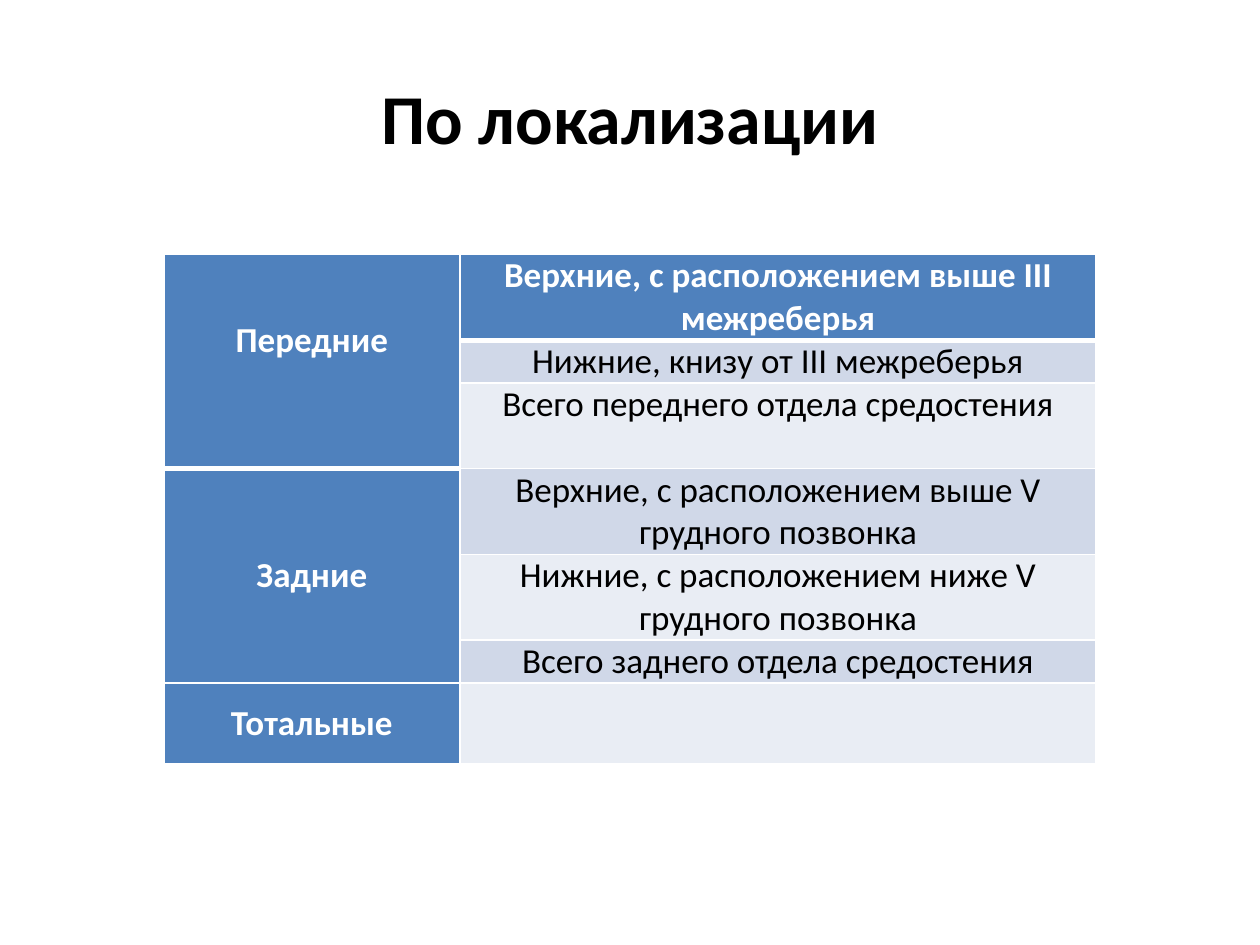
from lxml import etree
from pptx import Presentation
from pptx.dml.color import RGBColor
from pptx.enum.text import MSO_ANCHOR, PP_ALIGN
from pptx.oxml.ns import qn
from pptx.util import Inches, Pt

CENTER = PP_ALIGN.CENTER
TOP, MIDDLE = MSO_ANCHOR.TOP, MSO_ANCHOR.MIDDLE
COLORS = {"head": "4F81BD", "dark": "D0D8E8", "light": "E9EDF4",
          "white": "FFFFFF", "black": "000000"}


def set_text(tf, text, size, color, bold):
    tf.word_wrap = True
    p = tf.paragraphs[0]
    p.text = text
    p.alignment = CENTER
    p.font.name = "Calibri"
    p.font.size = Pt(size)
    p.font.bold = bold
    p.font.color.rgb = RGBColor.from_string(COLORS[color])


def add_borders(cell, widths):
    """Draw white cell borders; widths maps L, R, T and B to points."""
    tcPr = cell._tc.get_or_add_tcPr()
    for side, width in widths.items():
        ln = etree.SubElement(tcPr, qn(f"a:ln{side}"), w=str(Pt(width)))
        fill = etree.SubElement(ln, qn("a:solidFill"))
        etree.SubElement(fill, qn("a:srgbClr"), val=COLORS["white"])


prs = Presentation()
prs.slide_width, prs.slide_height = Inches(10), Inches(7.5)
s = prs.slides.add_slide(prs.slide_layouts[6])

title = s.shapes.add_textbox(Inches(0.5), Inches(0.3), Inches(9), Inches(1.25))
title.text_frame.vertical_anchor = MIDDLE
set_text(title.text_frame, "По локализации", 40, "black", True)

groups = {0: "Передние", 3: "Задние", 6: "Тотальные"}
details = [
    "Верхние, с расположением выше III межреберья",
    "Нижние, книзу от III межреберья",
    "Всего переднего отдела средостения",
    "Верхние, с расположением выше V грудного позвонка",
    "Нижние, с расположением ниже V грудного позвонка",
    "Всего заднего отдела средостения",
    "",
]
col_widths = [2.35, 5.05]
row_heights = [0.68, 0.34, 0.68, 0.68, 0.68, 0.34, 0.64]
thick_bottom = {(0, 0), (2, 0), (0, 1)}
thick_top = {(3, 0), (1, 1)}

table = s.shapes.add_table(len(row_heights), len(col_widths), Inches(1.3), Inches(2.02),
                           Inches(sum(col_widths)), Inches(sum(row_heights))).table
for column, width in zip(table.columns, col_widths):
    column.width = Inches(width)
for row, height in zip(table.rows, row_heights):
    row.height = Inches(height)
for first in (0, 3):
    table.cell(first, 0).merge(table.cell(first + 2, 0))

for i, detail in enumerate(details):
    for j, text in enumerate((groups.get(i, ""), detail)):
        cell = table.cell(i, j)
        is_head = i == 0 or j == 0
        add_borders(cell, {"L": 1, "R": 1,
                           "T": 3 if (i, j) in thick_top else 1,
                           "B": 3 if (i, j) in thick_bottom else 1})
        cell.fill.solid()
        band = "head" if is_head else "dark" if i % 2 else "light"
        cell.fill.fore_color.rgb = RGBColor.from_string(COLORS[band])
        cell.margin_left = cell.margin_right = Inches(0.07)
        cell.margin_top = cell.margin_bottom = 0
        cell.vertical_anchor = MIDDLE if j == 0 else TOP
        if text:
            set_text(cell.text_frame, text, 20, "white" if is_head else "black", is_head)

# The first group name sits one half line above the middle
table.cell(0, 0).margin_bottom = Inches(0.34)

prs.save("out.pptx")
